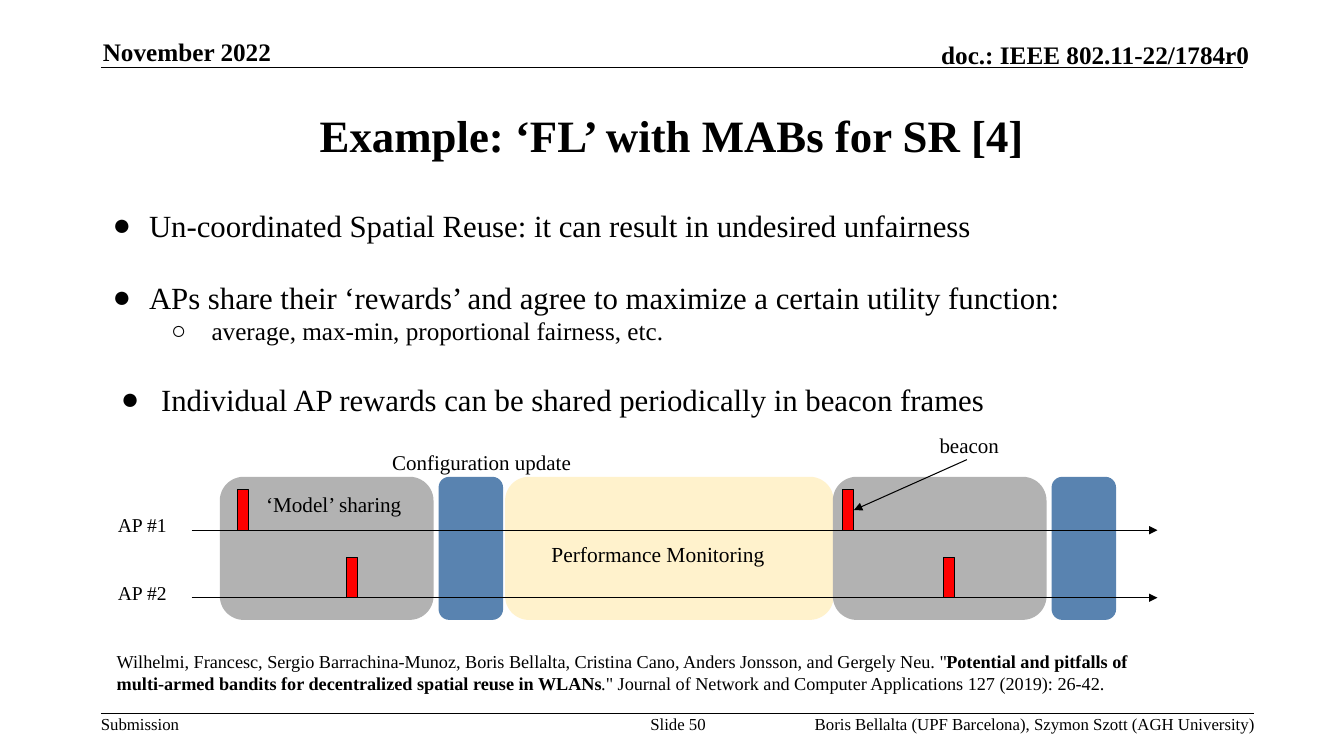
from dataclasses import dataclass

from lxml.etree import SubElement
from pptx import Presentation
from pptx.dml.color import RGBColor
from pptx.enum.shapes import MSO_CONNECTOR, MSO_SHAPE
from pptx.enum.text import MSO_ANCHOR, PP_ALIGN
from pptx.oxml.ns import qn
from pptx.slide import Slide
from pptx.text.text import TextFrame
from pptx.util import Emu, Pt

EMU_PER_PX = 9144  # 100 px to the inch


@dataclass(frozen=True)
class Theme:
    font: str = "Times New Roman"
    ink: str = "000000"
    sharing: str = "B2B2B2"
    update: str = "5983B0"
    monitoring: str = "FFF2CC"
    beacon: str = "FF0000"
    title: float = 32
    body: float = 22
    sub_body: float = 18
    header: float = 18
    footer: float = 12
    citation: float = 13
    access_point: float = 14
    label: float = 15
    sharing_label: float = 15.1
    monitoring_label: float = 15.3
    rule_width: float = 1
    thin_width: float = 0.75


THEME = Theme()


@dataclass(frozen=True)
class Box:
    left: int
    top: int
    width: int
    height: int


@dataclass(frozen=True)
class Run:
    text: str
    bold: bool = False


@dataclass(frozen=True)
class Label:
    box: Box
    runs: tuple[Run, ...]
    size: float
    align: PP_ALIGN = PP_ALIGN.LEFT
    anchor: MSO_ANCHOR = MSO_ANCHOR.TOP
    inset_x: int = 0
    inset_y: int = 0


@dataclass(frozen=True)
class Bullet:
    text: str
    size: float
    symbol: str
    margin: int
    hanging: int
    level: int = 0
    space_before: float = 0


@dataclass(frozen=True)
class Phase:
    left: int
    width: int
    color: str


@dataclass(frozen=True)
class Line:
    start: tuple[int, int]
    end: tuple[int, int]
    width: float = THEME.thin_width
    arrow: bool = True


def px(value: int) -> Emu:
    return Emu(value * EMU_PER_PX)


def place(box: Box) -> tuple[Emu, Emu, Emu, Emu]:
    return px(box.left), px(box.top), px(box.width), px(box.height)


def set_frame(frame: TextFrame, anchor: MSO_ANCHOR, inset_x: int, inset_y: int) -> None:
    frame.word_wrap = True
    frame.vertical_anchor = anchor
    frame.margin_left = frame.margin_right = px(inset_x)
    frame.margin_top = frame.margin_bottom = px(inset_y)


def add_run(paragraph, run: Run, size: float) -> None:
    text_run = paragraph.add_run()
    text_run.text = run.text
    font = text_run.font
    font.name, font.size, font.bold = THEME.font, Pt(size), run.bold
    font.color.rgb = RGBColor.from_string(THEME.ink)


def fill_label(shape, label: Label) -> None:
    frame = shape.text_frame
    set_frame(frame, label.anchor, label.inset_x, label.inset_y)
    paragraph = frame.paragraphs[0]
    paragraph.alignment = label.align
    for run in label.runs:
        add_run(paragraph, run, label.size)


def add_label(slide: Slide, label: Label) -> None:
    fill_label(slide.shapes.add_textbox(*place(label.box)), label)


def add_title(slide: Slide, label: Label) -> None:
    title = slide.shapes.title
    title.left, title.top, title.width, title.height = place(label.box)
    fill_label(title, label)


def add_bullets(slide: Slide, box: Box, bullets: list[Bullet]) -> None:
    frame = slide.shapes.add_textbox(*place(box)).text_frame
    set_frame(frame, MSO_ANCHOR.TOP, 10, 5)
    for index, bullet in enumerate(bullets):
        paragraph = frame.add_paragraph() if index else frame.paragraphs[0]
        paragraph.level = bullet.level
        paragraph.space_before = Pt(bullet.space_before)
        properties = paragraph._p.get_or_add_pPr()
        properties.set("marL", str(px(bullet.margin)))
        properties.set("indent", str(px(-bullet.hanging)))
        color = SubElement(properties, qn("a:buClr"))
        SubElement(color, qn("a:srgbClr"), val=THEME.ink)
        SubElement(properties, qn("a:buFont"), typeface=THEME.font)
        SubElement(properties, qn("a:buChar"), char=bullet.symbol)
        add_run(paragraph, Run(bullet.text), bullet.size)


def add_block(slide: Slide, kind: MSO_SHAPE, box: Box, color: str, outlined: bool) -> None:
    shape = slide.shapes.add_shape(kind, *place(box))
    shape.shadow.inherit = False
    shape.fill.solid()
    shape.fill.fore_color.rgb = RGBColor.from_string(color)
    if outlined:
        shape.line.color.rgb = RGBColor.from_string(THEME.ink)
        shape.line.width = Pt(THEME.thin_width)
    else:
        shape.line.fill.background()


def add_line(slide: Slide, line: Line) -> None:
    ends = [px(value) for value in (*line.start, *line.end)]
    connector = slide.shapes.add_connector(MSO_CONNECTOR.STRAIGHT, *ends)
    connector.line.color.rgb = RGBColor.from_string(THEME.ink)
    connector.line.width = Pt(line.width)
    if line.arrow:
        SubElement(connector.line._get_or_add_ln(), qn("a:tailEnd"), type="triangle")
    SubElement(connector._element.spPr, qn("a:effectLst"))


def diagram_label(box: Box, text: str, size: float) -> Label:
    return Label(box, (Run(text),), size, inset_x=10, inset_y=10)


TITLE = Label(Box(100, 75, 1133, 117), (Run("Example: ‘FL’ with MABs for SR [4]", True),),
              THEME.title, PP_ALIGN.CENTER, MSO_ANCHOR.MIDDLE, 10, 5)
PAGE_LABELS = [
    Label(Box(102, 36, 273, 30), (Run("November 2022", True),), THEME.header, anchor=MSO_ANCHOR.BOTTOM),
    Label(Box(729, 39, 510, 30), (Run("doc.: IEEE 802.11-22/1784r0", True),), THEME.header,
          PP_ALIGN.RIGHT, MSO_ANCHOR.BOTTOM),
    Label(Box(100, 708, 100, 20), (Run("Submission"),), THEME.footer),
    Label(Box(634, 708, 77, 20), (Run("Slide 50"),), THEME.footer, PP_ALIGN.CENTER),
    Label(Box(781, 708, 464, 20), (Run("Boris Bellalta (UPF Barcelona), Szymon Szott (AGH University)"),),
          THEME.footer, PP_ALIGN.RIGHT),
    Label(Box(106, 647, 1064, 40), (
        Run("Wilhelmi, Francesc, Sergio Barrachina-Munoz, Boris Bellalta, Cristina Cano, "
            "Anders Jonsson, and Gergely Neu. \""),
        Run("Potential and pitfalls of multi-armed bandits for decentralized spatial reuse in WLANs", True),
        Run(".\" Journal of Network and Computer Applications 127 (2019): 26-42."),
    ), THEME.citation, anchor=MSO_ANCHOR.MIDDLE, inset_x=10, inset_y=5),
]
PAGE_RULES = [Line((100, 67), (1233, 67), THEME.rule_width, False),
              Line((100, 708), (1244, 708), THEME.rule_width, False)]
BULLETS = [
    Bullet("Un-coordinated Spatial Reuse: it can result in undesired unfairness", THEME.body, "●", 38, 36),
    Bullet("APs share their ‘rewards’ and agree to maximize a certain utility function:",
           THEME.body, "●", 38, 36, space_before=25),
    Bullet("average, max-min, proportional fairness, etc.", THEME.sub_body, "○", 100, 40, level=1),
    Bullet("Individual AP rewards can be shared periodically in beacon frames",
           THEME.body, "●", 50, 40, space_before=25),
]
CYCLE = 608
SHARING = Phase(218, 212, THEME.sharing)
UPDATE = Phase(435, 64, THEME.update)
MONITORING = Phase(501, 326, THEME.monitoring)
PHASES = [SHARING, UPDATE, MONITORING,
          *(Phase(phase.left + CYCLE, phase.width, phase.color) for phase in (SHARING, UPDATE))]
ACCESS_POINTS = {"AP #1": (526, (236, 836)), "AP #2": (593, (344, 936))}
DIAGRAM_LABELS = [
    diagram_label(Box(254, 477, 171, 64), "‘Model’ sharing", THEME.sharing_label),
    diagram_label(Box(379, 436, 255, 64), "Configuration update", THEME.label),
    diagram_label(Box(537, 527, 255, 49), "Performance Monitoring", THEME.monitoring_label),
    diagram_label(Box(922, 419, 126, 64), "beacon", THEME.label),
]


def add_timeline(slide: Slide) -> None:
    for phase in PHASES:
        add_block(slide, MSO_SHAPE.ROUNDED_RECTANGLE, Box(phase.left, 473, phase.width, 142), phase.color, False)
    for name, (axis, beacons) in ACCESS_POINTS.items():
        add_line(slide, Line((190, axis), (1148, axis)))
        add_label(slide, diagram_label(Box(107, axis - 27, 77, 49), name, THEME.access_point))
        for left in beacons:
            add_block(slide, MSO_SHAPE.RECTANGLE, Box(left, axis - 40, 11, 40), THEME.beacon, True)
    add_line(slide, Line((959, 456), (847, 506)))
    for label in DIAGRAM_LABELS:
        add_label(slide, label)


def main() -> None:
    presentation = Presentation()
    presentation.slide_width, presentation.slide_height = px(1333), px(750)
    slide = presentation.slides.add_slide(presentation.slide_layouts.get_by_name("Title Only"))
    add_title(slide, TITLE)
    for rule in PAGE_RULES:
        add_line(slide, rule)
    for label in PAGE_LABELS:
        add_label(slide, label)
    add_bullets(slide, Box(100, 200, 1133, 257), BULLETS)
    add_timeline(slide)
    presentation.save("out.pptx")


if __name__ == "__main__":
    main()
